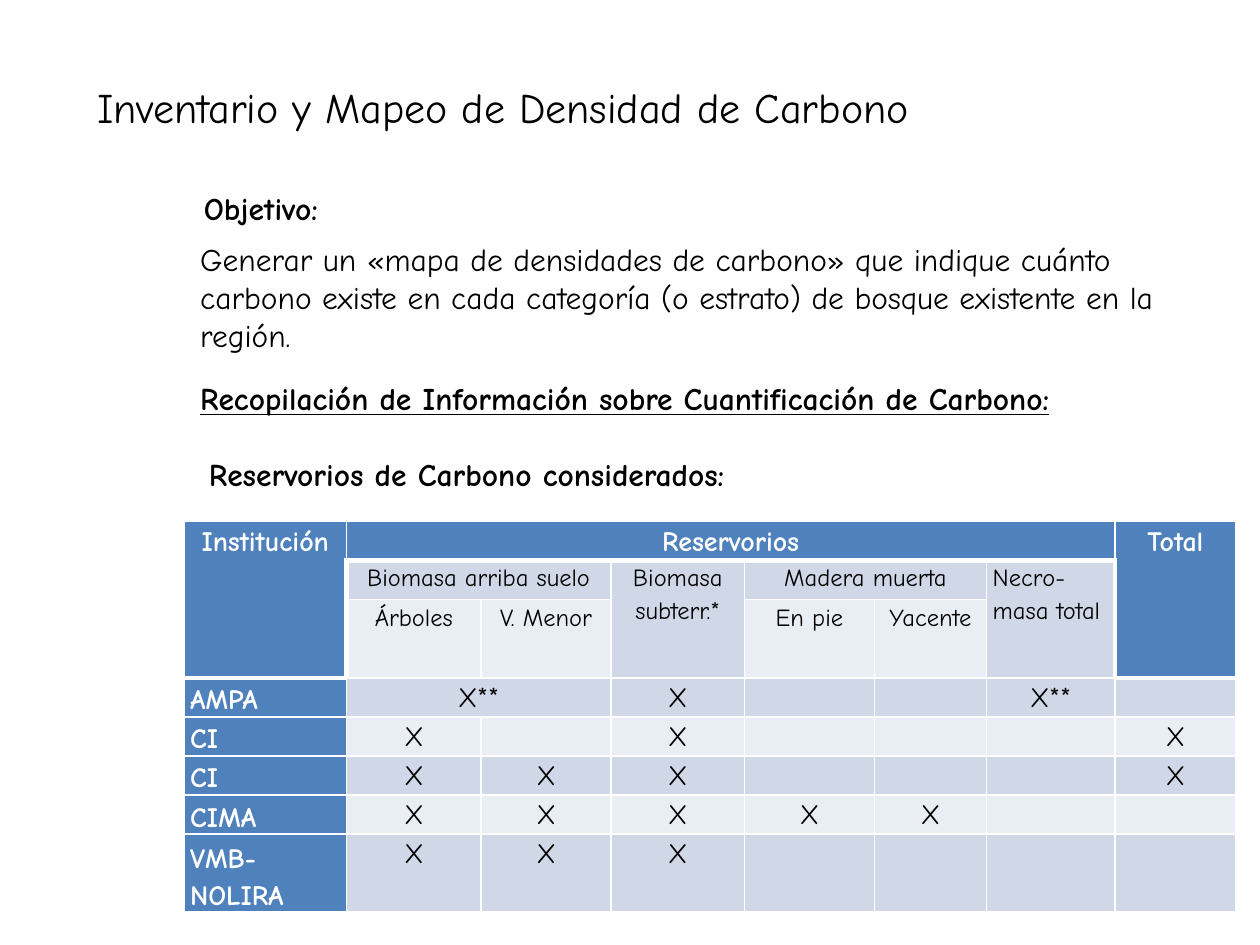
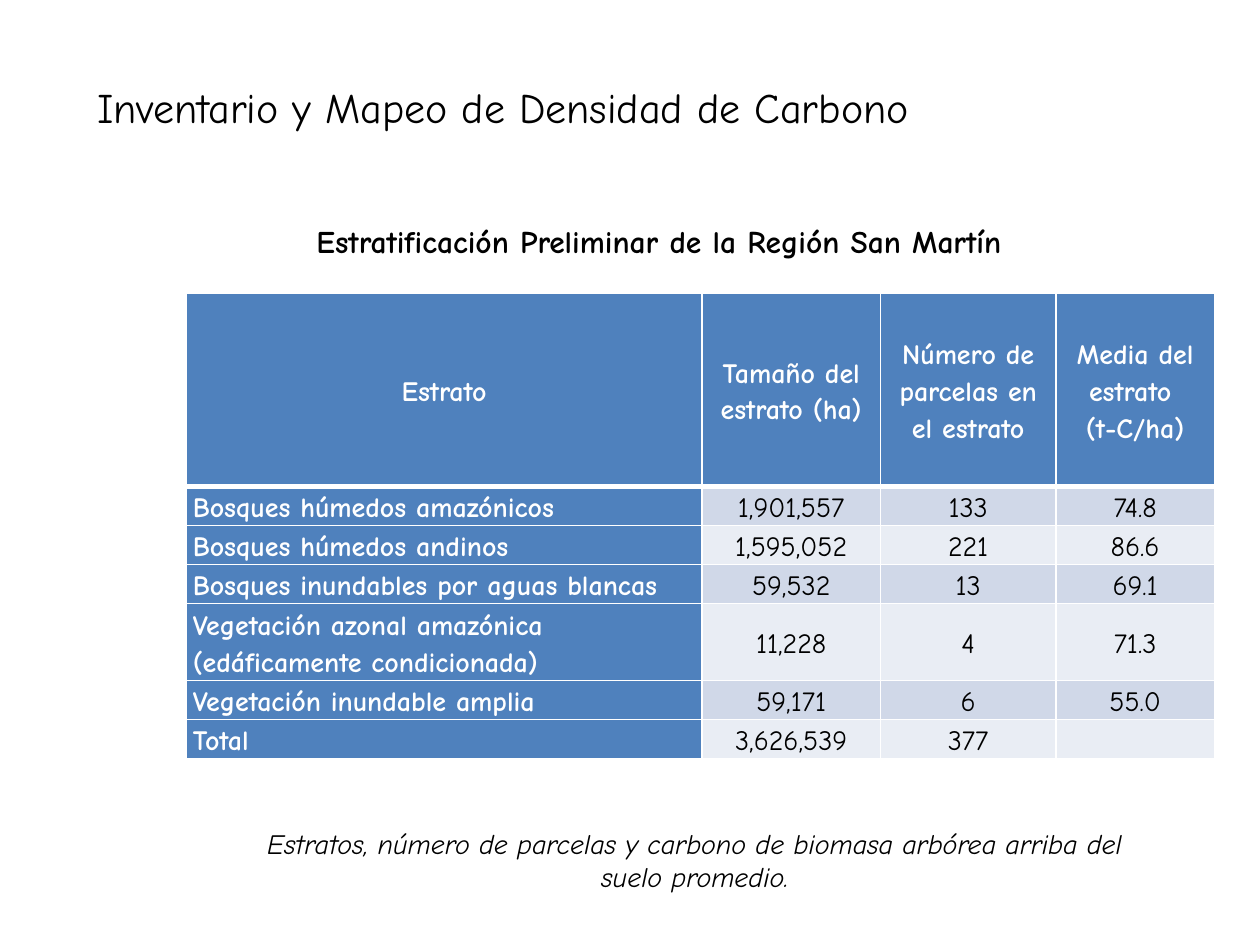
from dataclasses import dataclass

from lxml import etree
from pptx import Presentation
from pptx.dml.color import RGBColor
from pptx.enum.text import MSO_ANCHOR, MSO_AUTO_SIZE, PP_ALIGN
from pptx.oxml.ns import qn
from pptx.util import Inches, Pt

LEFT, CENTER = PP_ALIGN.LEFT, PP_ALIGN.CENTER
TOP, MIDDLE, BOTTOM = MSO_ANCHOR.TOP, MSO_ANCHOR.MIDDLE, MSO_ANCHOR.BOTTOM
FIXED = MSO_AUTO_SIZE.NONE
TITLE_ONLY = 5


@dataclass(frozen=True)
class Theme:
    """Fonts, colours, type sizes and line widths of the deck."""
    font: str = "Comic Neue"
    ink: str = "000000"
    white: str = "FFFFFF"
    head: str = "4F81BD"
    dark: str = "D0D8E8"
    light: str = "E9EDF4"
    title: int = 24
    text: int = 18
    cell: int = 16
    small: int = 14
    thin: int = 1
    thick: int = 3


THEME = Theme()
HEADING = "Inventario y Mapeo de Densidad de Carbono"

POOLS = [
    ["Institución", "Reservorios", "", "", "", "", "", "Total"],
    ["", "Biomasa arriba suelo", "", "Biomasa subterr.*", "Madera muerta", "",
     "Necro-masa total", ""],
    ["", "Árboles", "V. Menor", "", "En pie", "Yacente", "", ""],
    ["AMPA", "X**", "", "X", "", "", "X**", ""],
    ["CI", "X", "", "X", "", "", "", "X"],
    ["CI", "X", "X", "X", "", "", "", "X"],
    ["CIMA", "X", "X", "X", "X", "X", "", ""],
    ["VMB-NOLIRA", "X", "X", "X", "", "", "", ""],
]
POOL_SPANS = [(0, 0, 2, 0), (0, 1, 0, 6), (0, 7, 2, 7), (1, 1, 1, 2),
              (1, 3, 2, 3), (1, 4, 1, 5), (1, 6, 2, 6), (3, 1, 3, 2)]

STRATA = [
    ["Estrato", "Tamaño del estrato (ha)", "Número de parcelas en el estrato",
     "Media del estrato \n(t-C/ha)"],
    ["Bosques húmedos amazónicos", "1,901,557", "133", "74.8"],
    ["Bosques húmedos andinos", "1,595,052", "221", "86.6"],
    ["Bosques inundables por aguas blancas", "59,532", "13", "69.1"],
    ["Vegetación azonal amazónica (edáficamente condicionada)", "11,228", "4", "71.3"],
    ["Vegetación inundable amplia", "59,171", "6", "55.0"],
    ["Total", "3,626,539", "377", ""],
]


def write(frame, text, size=THEME.text, color=THEME.ink, align=LEFT, space=None,
          bold=False, italic=False, line=False):
    """Fill a text frame with formatted paragraphs, one per line of text."""
    for i, part in enumerate(text.split("\n")):
        para = frame.add_paragraph() if i else frame.paragraphs[0]
        para.alignment = align
        if space:
            para.line_spacing = space
        run = para.add_run()
        run.text = part
        font = run.font
        font.name, font.size = THEME.font, Pt(size)
        font.bold, font.italic, font.underline = bold, italic, line
        font.color.rgb = RGBColor.from_string(color)


def label(slide, box, text, wrap=True, anchor=TOP, **style):
    """Add a text box at the given box."""
    frame = slide.shapes.add_textbox(*map(Inches, box)).text_frame
    frame.word_wrap, frame.vertical_anchor = wrap, anchor
    write(frame, text, **style)


def start(deck):
    """Add a slide with the shared title."""
    slide = deck.slides.add_slide(deck.slide_layouts[TITLE_ONLY])
    title = slide.shapes.title
    title.left, title.top, title.width, title.height = map(Inches, (0.67, 0.6, 7.93, 0.5))
    frame = title.text_frame
    frame.auto_size, frame.vertical_anchor = FIXED, TOP
    write(frame, HEADING, size=THEME.title)
    return slide


def edge(cell, side, width):
    """Draw one white border of a table cell."""
    props = cell._tc.get_or_add_tcPr()
    line = etree.SubElement(props, qn(f"a:ln{side}"), w=str(Pt(width)))
    fill = etree.SubElement(line, qn("a:solidFill"))
    etree.SubElement(fill, qn("a:srgbClr"), val=THEME.white)


def grid(slide, box, cols, rows, data, spans=(), small=(), left=(),
         anchor=TOP, side=BOTTOM):
    """Add a banded table with header cells set off by thick borders."""
    table = slide.shapes.add_table(len(rows), len(cols), *map(Inches, box)).table
    table.first_row = table.horz_banding = False
    for col, width in zip(table.columns, cols):
        col.width = Inches(width)
    for row, height in zip(table.rows, rows):
        row.height = Inches(height)
    areas = {(r, c): (r, c, r, c) for r in range(len(rows)) for c in range(len(cols))}
    for span in spans:
        r1, c1, r2, c2 = span
        table.cell(r1, c1).merge(table.cell(r2, c2))
        areas.update({(r, c): span for r in range(r1, r2 + 1) for c in range(c1, c2 + 1)})

    for (r, c), (r1, c1, r2, c2) in areas.items():
        cell = table.cell(r, c)
        near = {"L": (r, c1 - 1), "R": (r, c2 + 1), "T": (r1 - 1, c), "B": (r2 + 1, c)}
        for name, spot in near.items():
            other = areas.get(spot, (r1,))[0]
            edge(cell, name, THEME.thick if (r1 == 0) != (other == 0) else THEME.thin)
        head = r1 == 0 or c1 == 0
        tint = THEME.head if head else THEME.dark if r1 % 2 else THEME.light
        cell.fill.solid()
        cell.fill.fore_color.rgb = RGBColor.from_string(tint)
        cell.margin_left = cell.margin_right = Inches(0.05)
        cell.margin_top = cell.margin_bottom = 0
        cell.vertical_anchor = side if c == 0 and r else anchor
        if data[r][c]:
            flush = (c == 0 and r > 0) or (r, c) in left
            write(cell.text_frame, data[r][c], space=1.15, bold=head,
                  size=THEME.small if r in small else THEME.cell,
                  color=THEME.white if head else THEME.ink,
                  align=LEFT if flush else CENTER)


def pools(deck):
    """Build the slide on the goal and the carbon pools."""
    slide = start(deck)
    label(slide, (1.52, 1.45, 1.34, 0.4), "Objetivo:", wrap=False, bold=True)
    label(slide, (1.49, 1.86, 7.92, 1),
          "Generar un «mapa de densidades de carbono» que indique cuánto carbono existe "
          "en cada categoría (o estrato) de bosque existente en la región.")
    label(slide, (1.49, 2.96, 7.68, 0.4),
          "Recopilación de Información sobre Cuantificación de Carbono:",
          wrap=False, bold=True, line=True)
    label(slide, (1.56, 3.56, 4.78, 0.4), "Reservorios de Carbono considerados:",
          wrap=False, bold=True)
    grid(slide, (1.46, 4.14, 8.35, 3.12),
         (1.29, 1.07, 1.03, 1.06, 1.03, 0.89, 1.02, 0.96),
         (0.31, 0.31, 0.62, 0.31, 0.31, 0.31, 0.31, 0.62),
         POOLS, spans=POOL_SPANS, small=(1, 2), left=((1, 6),))


def strata(deck):
    """Build the slide on the forest strata."""
    slide = start(deck)
    label(slide, (1.61, 1.71, 7.24, 0.4),
          "Estratificación Preliminar de la Región San Martín",
          anchor=MIDDLE, align=CENTER, bold=True)
    grid(slide, (1.48, 2.33, 8.16, 3.99), (4.09, 1.42, 1.39, 1.26),
         (1.53, 0.31, 0.31, 0.31, 0.61, 0.31, 0.31),
         STRATA, anchor=MIDDLE, side=MIDDLE)
    label(slide, (1.93, 6.51, 7.17, 0.64),
          "Estratos, número de parcelas y carbono de biomasa arbórea arriba del "
          "suelo promedio.", size=THEME.cell, align=CENTER, italic=True)


def main():
    """Build and save the deck."""
    deck = Presentation()
    deck.slide_width, deck.slide_height = Inches(10), Inches(7.5)
    pools(deck)
    strata(deck)
    deck.save("out.pptx")


if __name__ == "__main__":
    main()
